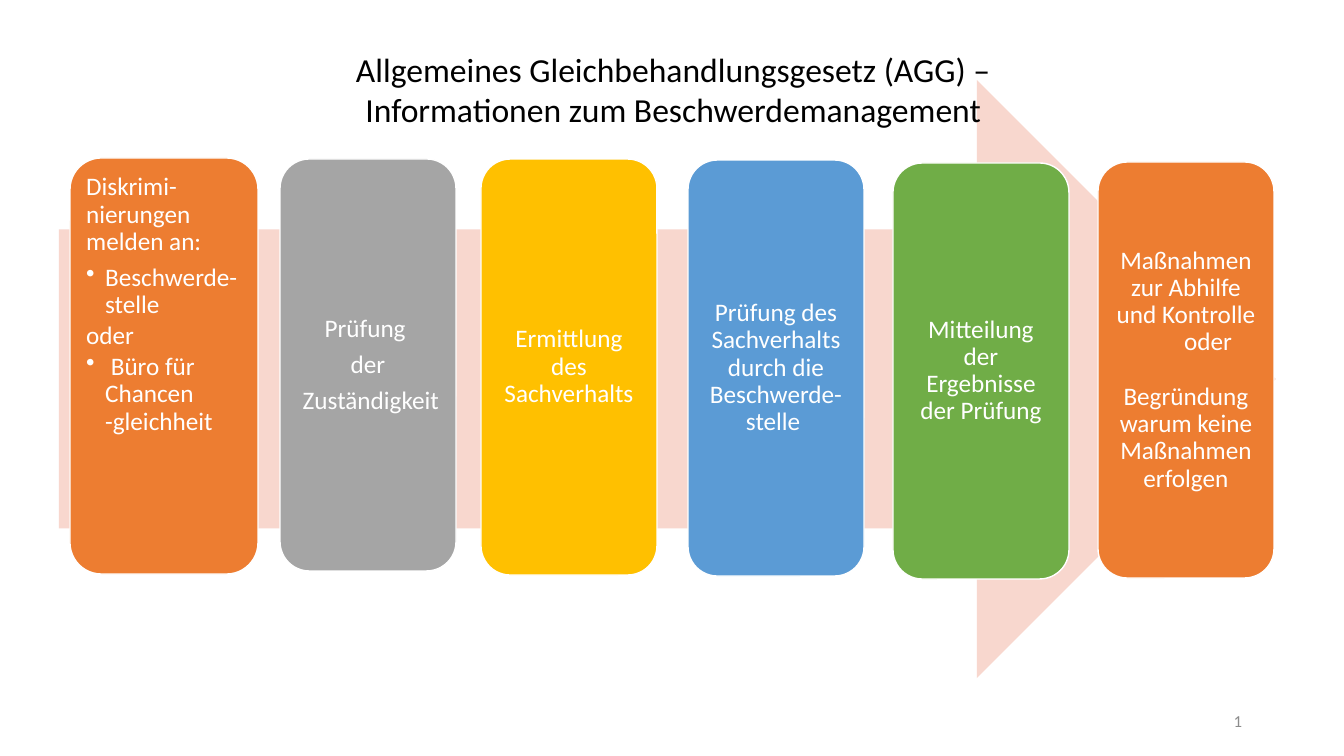
"""Build the slide on the complaint procedure under the AGG."""
from lxml import etree
from pptx import Presentation
from pptx.dml.color import RGBColor
from pptx.enum.shapes import MSO_SHAPE
from pptx.enum.text import MSO_ANCHOR, MSO_AUTO_SIZE, PP_ALIGN
from pptx.oxml.ns import qn
from pptx.util import Emu, Pt

ARROW, CARD = MSO_SHAPE.RIGHT_ARROW, MSO_SHAPE.ROUNDED_RECTANGLE
TOP, MIDDLE = MSO_ANCHOR.TOP, MSO_ANCHOR.MIDDLE
LEFT, CENTER, RIGHT = PP_ALIGN.LEFT, PP_ALIGN.CENTER, PP_ALIGN.RIGHT
EMU_PER_PX = 914400 / 100.8
FONT = "Calibri"
COLORS = {
    "arrow": "F8D7CE", "orange": "ED7D31", "gray": "A5A5A5",
    "yellow": "FFC000", "blue": "5B9BD5", "green": "70AD47",
    "white": "FFFFFF", "black": "000000", "number": "8C8C8C",
}
TITLE = ["Allgemeines Gleichbehandlungsgesetz (AGG) – ",
         "Informationen zum Beschwerdemanagement "]
REPORT = ["Diskrimi-nierungen melden an:", "Beschwerde-stelle", "oder",
          " Büro für Chancen -gleichheit"]
OUTCOME = ["Maßnahmen zur Abhilfe und Kontrolle", "oder",
           "Begründung warum keine Maßnahmen erfolgen"]
STEPS = [
    ((280, 159, 176, 412), "gray", ["Prüfung ", "der", " Zuständigkeit"]),
    ((481, 159, 176, 416), "yellow", ["Ermittlung des Sachverhalts"]),
    ((688, 160, 176, 416), "blue",
     ["Prüfung des Sachverhalts durch die Beschwerde-stelle "]),
    ((893, 163, 176, 416), "green", ["Mitteilung der Ergebnisse der Prüfung"]),
]


def px(n):
    """Turn pixels into EMU."""
    return Emu(round(n * EMU_PER_PX))


def rgb(name):
    """Look up a named colour."""
    return RGBColor.from_string(COLORS[name])


def style_font(font, size, color):
    """Set typeface, size and colour."""
    font.name, font.size = FONT, Pt(size)
    font.color.rgb = rgb(color)


def write(tf, lines, size, color, align):
    """Fill a text frame with one paragraph per line."""
    tf.word_wrap = True
    tf.text = "\n".join(lines)
    for p in tf.paragraphs:
        p.alignment = align
        for r in p.runs:
            style_font(r.font, size, color)


def add_block(s, kind, box, color):
    """Add a flat filled shape without outline."""
    sp = s.shapes.add_shape(kind, *map(px, box))
    sp.shadow.inherit = False
    sp.fill.solid()
    sp.fill.fore_color.rgb = rgb(color)
    sp.line.fill.background()
    return sp


def add_card(s, box, color, lines, align=CENTER, anchor=MIDDLE):
    """Add a step card and return its paragraphs."""
    sp = add_block(s, CARD, box, color)
    sp.line.color.rgb = rgb("white")
    sp.line.width = Pt(1)
    tf = sp.text_frame
    tf.margin_left = tf.margin_right = tf.margin_top = tf.margin_bottom = px(7)
    tf.vertical_anchor = anchor
    write(tf, lines, 18, "white", align)
    for p in tf.paragraphs:
        p.line_spacing = 0.9
        p.space_after = Pt(6.3)
    return tf.paragraphs


def indent(p, left, first=0, bullet=None):
    """Set paragraph indents and an optional bullet."""
    pPr = p._p.get_or_add_pPr()
    pPr.set("marL", str(px(left)))
    pPr.set("indent", str(px(first)))
    if bullet:
        etree.SubElement(pPr, qn("a:buChar")).set("char", bullet)


def add_report_card(s):
    """Add the first card with its list of contact points."""
    paragraphs = add_card(s, (70, 158, 188, 416), "orange", REPORT, LEFT, TOP)
    for p, bullet in zip(paragraphs[1:], ("•", None, "•")):
        p.space_after = Pt(2.7)
        indent(p, 19, -19, bullet)


def add_outcome_card(s):
    """Add the last card with its two alternatives."""
    measures, either, _ = add_card(s, (1098, 162, 176, 416), "orange", OUTCOME)
    measures.space_after = Pt(0)
    either.space_after = Pt(19.4)
    indent(either, 44)


def set_title(s):
    """Place the title in front of the arrow."""
    title = s.shapes.title
    title.left, title.top, title.width, title.height = map(px, (133, 44, 1088, 92))
    tf = title.text_frame
    write(tf, TITLE, 24, "black", CENTER)
    tf.vertical_anchor = TOP
    tf.auto_size = MSO_AUTO_SIZE.SHAPE_TO_FIT_TEXT
    s.shapes.element.append(title.element)


def add_slide_number(s):
    """Add the slide number as a live field."""
    tf = s.shapes.add_textbox(*map(px, (950, 701, 302, 40))).text_frame
    tf.vertical_anchor = MIDDLE
    write(tf, ["1"], 12, "number", RIGHT)
    r = tf.paragraphs[0].runs[0]._r
    r.tag = qn("a:fld")
    r.set("id", "{B6F15528-21DE-4FAA-801E-634DDDAF4B2B}")
    r.set("type", "slidenum")


def main():
    """Build and save the slide."""
    prs = Presentation()
    prs.slide_width, prs.slide_height = px(1344), px(756)
    s = prs.slides.add_slide(prs.slide_layouts[5])
    add_block(s, ARROW, (59, 80, 1217, 598), "arrow")
    add_report_card(s)
    for box, color, lines in STEPS:
        add_card(s, box, color, lines)
    add_outcome_card(s)
    set_title(s)
    add_slide_number(s)
    prs.save("out.pptx")


if __name__ == "__main__":
    main()
